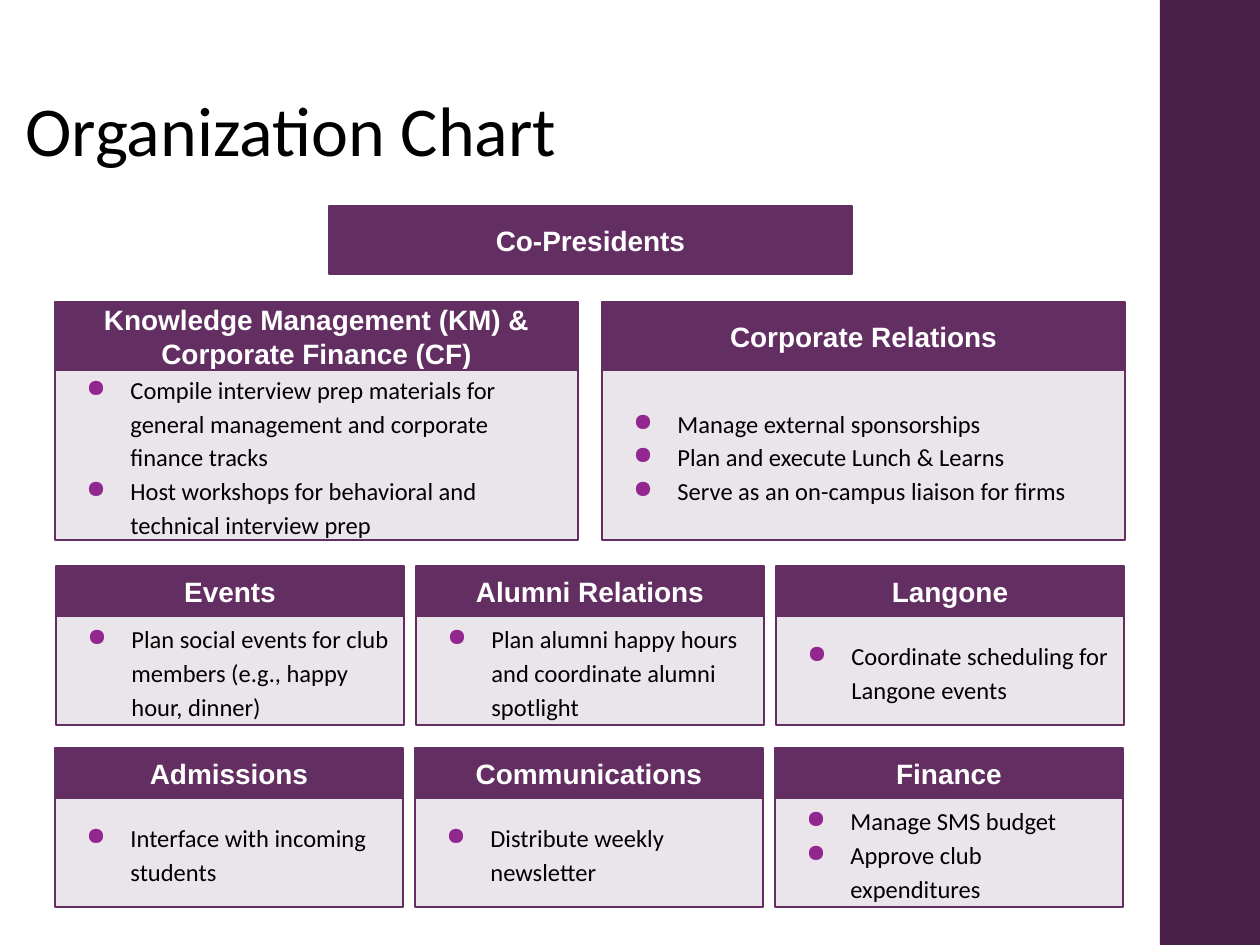
from lxml import etree
from pptx import Presentation
from pptx import util as u
from pptx.dml import color
from pptx.enum import shapes, text
from pptx.oxml import ns

EMU_PER_PX = 914400 / 126
PURPLE, DARK, PALE, ACCENT = "632E62", "4A2249", "EAE5EB", "92278F"
BLACK, WHITE = "000000", "FFFFFF"


def px(length):
    return u.Emu(round(length * EMU_PER_PX))


def rgb(value):
    return color.RGBColor.from_string(value)


class ChartSlide:
    def __init__(self, presentation):
        self.slide = presentation.slides.add_slide(presentation.slide_layouts[5])

    def set_font(self, paragraph, name, size, hex_color, bold=False):
        font = paragraph.font
        font.name, font.size, font.bold = name, u.Pt(size), bold
        font.color.rgb = rgb(hex_color)

    def add_bullet(self, paragraph):
        properties = paragraph._p.get_or_add_pPr()
        properties.set("marL", str(px(63)))
        properties.set("indent", str(px(-44)))
        bullet_color = etree.SubElement(properties, ns.qn("a:buClr"))
        etree.SubElement(bullet_color, ns.qn("a:srgbClr"), val=ACCENT)
        etree.SubElement(properties, ns.qn("a:buChar"), char="●")

    def title(self, wording, left, top, width, height):
        shape = self.slide.shapes.title
        shape.left, shape.top = px(left), px(top)
        shape.width, shape.height = px(width), px(height)
        frame = shape.text_frame
        frame.text = wording
        frame.auto_size = text.MSO_AUTO_SIZE.NONE
        frame.vertical_anchor = text.MSO_ANCHOR.BOTTOM
        paragraph = frame.paragraphs[0]
        paragraph.alignment = text.PP_ALIGN.LEFT
        paragraph.line_spacing = 0.9
        self.set_font(paragraph, "Calibri", 40, BLACK)

    def box(self, left, top, width, height, fill, line=None):
        shape = self.slide.shapes.add_shape(
            shapes.MSO_SHAPE.RECTANGLE, px(left), px(top), px(width), px(height))
        shape.shadow.inherit = False
        shape.fill.solid()
        shape.fill.fore_color.rgb = rgb(fill)
        if line:
            shape.line.color.rgb = rgb(line)
            shape.line.width = u.Pt(0.75)
        else:
            shape.line.fill.background()
        return shape

    def fill_text(self, shape, lines):
        frame = shape.text_frame
        frame.word_wrap = True
        frame.vertical_anchor = text.MSO_ANCHOR.MIDDLE
        frame.margin_left = frame.margin_right = u.Inches(0.1)
        frame.margin_top = frame.margin_bottom = u.Inches(0.1)
        frame.text = "\n".join(lines)
        return frame.paragraphs

    def header(self, lines, left, top, width, height):
        shape = self.box(left, top, width, height, PURPLE, PURPLE)
        for paragraph in self.fill_text(shape, lines):
            paragraph.alignment = text.PP_ALIGN.CENTER
            self.set_font(paragraph, "Arial", 16, WHITE, bold=True)

    def bullets(self, lines, left, top, width, height):
        shape = self.box(left, top, width, height, PALE, PURPLE)
        for paragraph in self.fill_text(shape, lines):
            paragraph.alignment = text.PP_ALIGN.LEFT
            paragraph.line_spacing = 1.15
            self.add_bullet(paragraph)
            self.set_font(paragraph, "Calibri", 14, BLACK)

    def team_row(self, teams, left, top, step, width, header_height, body_height):
        for column, (heading, duties) in enumerate(teams):
            team_left = left + column * step
            self.header(heading, team_left, top, width, header_height)
            self.bullets(duties, team_left, top + header_height, width, body_height)


LEADERSHIP = [
    (["Knowledge Management (KM) &", "Corporate Finance (CF)"],
     ["Compile interview prep materials for general management and corporate finance tracks",
      "Host workshops for behavioral and technical interview prep"]),
    (["Corporate Relations"],
     ["Manage external sponsorships",
      "Plan and execute Lunch & Learns",
      "Serve as an on-campus liaison for firms"]),
]
PROGRAMS = [
    (["Events"], ["Plan social events for club members (e.g., happy hour, dinner)"]),
    (["Alumni Relations"], ["Plan alumni happy hours and coordinate alumni spotlight"]),
    (["Langone"], ["Coordinate scheduling for Langone events"]),
]
OPERATIONS = [
    (["Admissions"], ["Interface with incoming students"]),
    (["Communications"], ["Distribute weekly newsletter"]),
    (["Finance"], ["Manage SMS budget", "Approve club expenditures"]),
]


def main():
    presentation = Presentation()
    presentation.slide_width, presentation.slide_height = px(1260), px(945)
    chart = ChartSlide(presentation)
    chart.box(1160, 0, 100, 945, DARK)
    chart.title("Organization Chart", 13, 8, 869, 170)
    chart.header(["Co-Presidents"], 329, 206, 523, 68)
    chart.team_row(LEADERSHIP, 55, 302, 547, 523, 68, 170)
    chart.team_row(PROGRAMS, 56, 566, 360, 348, 50, 109)
    chart.team_row(OPERATIONS, 55, 748, 360, 348, 50, 109)
    presentation.save("out.pptx")


if __name__ == "__main__":
    main()
